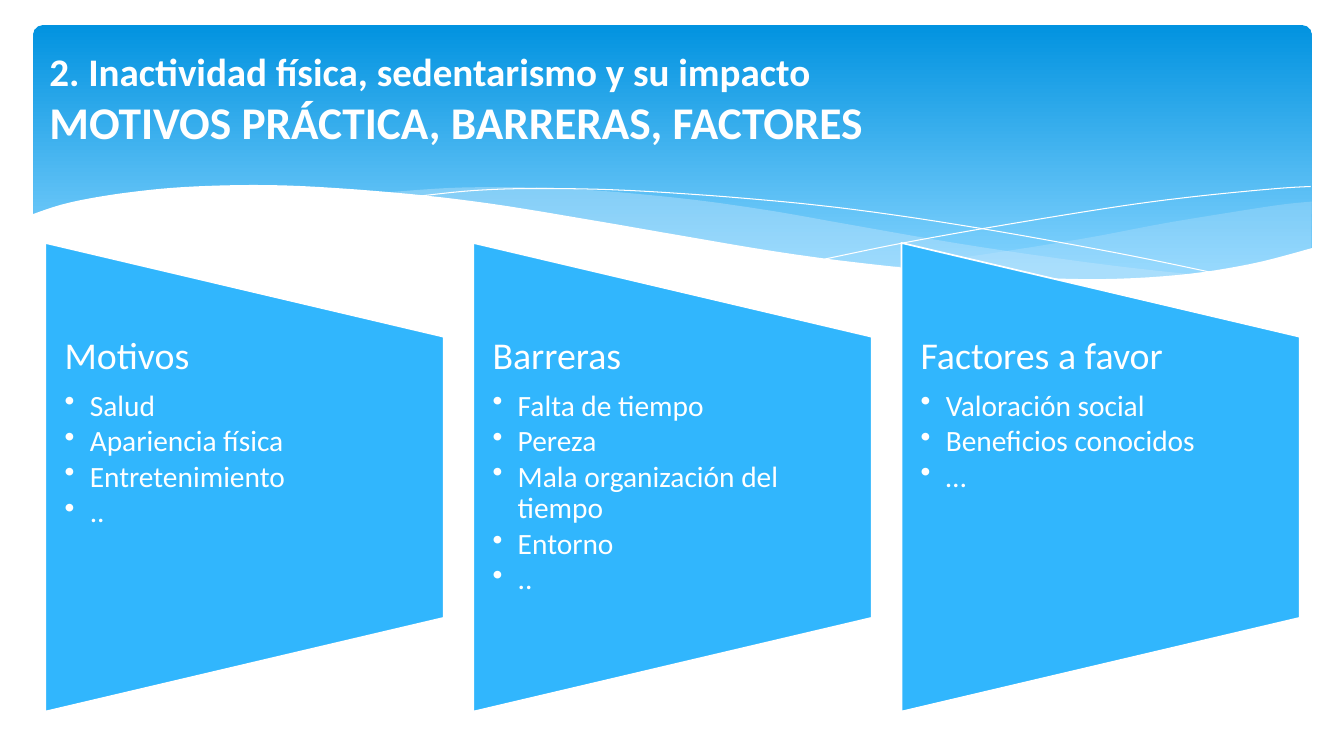
from lxml import etree
from pptx import Presentation
from pptx.dml.color import RGBColor
from pptx.enum.shapes import MSO_SHAPE
from pptx.enum.text import MSO_ANCHOR
from pptx.oxml.ns import qn
from pptx.util import Inches, Pt

ROUND = MSO_SHAPE.ROUNDED_RECTANGLE
FLAP = MSO_SHAPE.FLOWCHART_MANUAL_OPERATION
MIDDLE = MSO_ANCHOR.MIDDLE
FONT = "Calibri"
COLORS = {"deep": "0293E0", "sky": "83D3FE", "mist": "C6E7FC",
          "panel": "31B6FD", "white": "FFFFFF"}

TITLE = [("2. Inactividad física, sedentarismo y su impacto", 27.9),
         ("MOTIVOS PRÁCTICA, BARRERAS, FACTORES", 32.4)]
PANELS = [
    ("Motivos", ["Salud", "Apariencia física", "Entretenimiento", ".."]),
    ("Barreras", ["Falta de tiempo", "Pereza", "Mala organización del tiempo",
                  "Entorno", ".."]),
    ("Factores a favor", ["Valoración social", "Beneficios conocidos", "…"]),
]

TAIL_TOP = [(12.7, .16), (12.33, .2), (11.57, .32), (11.16, .39), (10.42, .53),
            (9.41, .69), (8.51, .81)]
TAIL_LOW = [(8.51, .81), (9.27, .89), (9.94, .93), (10.68, .94), (11.43, .91),
            (12.07, .8), (12.69, .63)]
MID_TOP = [(11.59, .89), (10.85, .81), (10.02, .7), (9.1, .56), (8.07, .38),
           (7.27, .24), (6.38, .12), (5.29, .03), (4.28, .02), (3.51, .07)]
MID_LOW = [(3.51, .07), (4.25, .15), (5.08, .27), (6.23, .48), (7.24, .65),
           (8.15, .77), (9.14, .88), (9.99, .94), (10.73, .94), (11.59, .89)]
CREST = [(3.81, .11), (4.39, .05), (5.04, .03), (5.94, .05), (7.11, .13),
         (8.17, .24), (9.38, .42), (10.77, .67), (11.79, .88)]
SWELL = [(7.87, .73), (8.65, .57), (9.66, .39), (10.84, .2), (11.63, .1),
         (12.36, .03), (12.69, .01)]
FRONT = [(12.71, .62), (12.09, .78), (11.36, .89), (10.47, .93), (9.37, .88),
         (8.32, .78), (7.41, .66), (6.4, .49), (5.65, .36), (4.55, .18),
         (3.59, .07), (2.51, 0), (1.63, .01), (.96, .07), (.38, .17), (0, .29)]


def color(name):
    """Return the named colour."""
    return RGBColor.from_string(COLORS[name])


def smooth(knots, steps=6):
    """Return points on a smooth curve through the knots."""
    ends = [knots[0], *knots, knots[-1]]
    points = []
    for a, b, c, d in zip(ends, ends[1:], ends[2:], ends[3:]):
        for step in range(steps):
            t = step / steps
            points.append(tuple(
                q + t * (r - p) / 2 + t * t * (p - 2.5 * q + 2 * r - s / 2)
                + t ** 3 * (1.5 * (q - r) + (s - p) / 2)
                for p, q, r, s in zip(a, b, c, d)))
    return points + [knots[-1]]


def wave(slide, box, points, fill=None, alpha=100):
    """Draw a filled wave, or a thin white curve if no fill is given."""
    left, top = box[:2]
    spots = [(Inches(left + x), Inches(top + y)) for x, y in points]
    pen = slide.shapes.build_freeform(*spots[0])
    pen.add_line_segments(spots[1:], close=bool(fill))
    shape = pen.convert_to_shape()
    shape.shadow.inherit = False
    if not fill:
        shape.fill.background()
        shape.line.color.rgb = color("white")
        shape.line.width = Pt(0)
        return
    shape.fill.solid()
    shape.fill.fore_color.rgb = color(fill)
    shape.line.fill.background()
    if alpha < 100:
        tint = shape.fill._xPr.find(".//" + qn("a:srgbClr"))
        etree.SubElement(tint, qn("a:alpha"), val=str(alpha * 1000))


def banner(slide, box):
    """Draw the blue header with its waves."""
    left, top, width, height = box
    shape = slide.shapes.add_shape(ROUND, *map(Inches, box))
    shape.adjustments[0] = 0.034
    shape.shadow.inherit = False
    shape.line.fill.background()
    shape.fill.gradient()
    shape.fill.gradient_angle = 270
    for stop, name, spot in zip(shape.fill.gradient_stops, ("deep", "sky"), (0, 0.9)):
        stop.color.rgb = color(name)
        stop.position = spot
    area = (left - 0.02, top + 1.59, width + 0.04, height - 1.25)
    wave(slide, area, smooth(TAIL_TOP) + smooth(TAIL_LOW), "mist", 29)
    wave(slide, area, smooth(MID_TOP) + smooth(MID_LOW), "mist", 40)
    wave(slide, area, smooth(CREST))
    wave(slide, area, smooth(SWELL))
    base = [(0, area[3]), (area[2], area[3])]
    wave(slide, area, smooth(FRONT) + base, "white")


def textbox(slide, box, side, edge):
    """Add a wrapping text box and return its frame."""
    frame = slide.shapes.add_textbox(*map(Inches, box)).text_frame
    frame.word_wrap = True
    frame.margin_left = frame.margin_right = Inches(side)
    frame.margin_top = frame.margin_bottom = Inches(edge)
    return frame


def style(para, size, bold=False):
    """Set the white font of a paragraph."""
    for run in para.runs:
        run.font.name = FONT
        run.font.size = Pt(size)
        run.font.bold = bold
        run.font.color.rgb = color("white")


def title(slide, box):
    """Write the two title lines."""
    frame = textbox(slide, box, 0.12, 0.06)
    frame.vertical_anchor = MIDDLE
    frame.text = "\n".join(text for text, size in TITLE)
    for para, (text, size) in zip(frame.paragraphs, TITLE):
        style(para, size, True)


def bullet(para):
    """Give a paragraph a hanging bullet."""
    para.level = 1
    props = para._p.get_or_add_pPr()
    props.set("marL", str(Inches(0.25)))
    props.set("indent", str(-Inches(0.25)))
    etree.SubElement(props, qn("a:buChar"), char="•")


def panel(slide, box, head, items):
    """Draw a tapered panel with its heading and bullets."""
    left, top, width, height = box
    shift = (height - width) / 2
    shape = slide.shapes.add_shape(
        FLAP, Inches(left - shift), Inches(top + shift), Inches(height), Inches(width))
    shape.rotation = 270
    shape.shadow.inherit = False
    shape.fill.solid()
    shape.fill.fore_color.rgb = color("panel")
    shape.line.color.rgb = color("white")
    shape.line.width = Pt(1.25)
    frame = textbox(slide, (left, top + height / 5, width, height * 0.6), 0.19, 0)
    frame.text = "\n".join([head, *items])
    for rank, para in enumerate(frame.paragraphs):
        para.line_spacing = 0.9
        para.space_after = Pt(2.7 if rank else 9.4)
        if rank:
            bullet(para)
        style(para, 21 if rank else 27)


def main():
    """Build and save the slide."""
    deck = Presentation()
    deck.slide_width, deck.slide_height = Inches(13.33), Inches(7.5)
    slide = deck.slides.add_slide(deck.slide_layouts[6])
    banner(slide, (0.33, 0.25, 12.68, 2.7))
    for rank, (head, items) in enumerate(PANELS):
        panel(slide, (0.45 + rank * 4.245, 2.41, 3.95, 4.65), head, items)
    title(slide, (0.37, 0.29, 9.06, 1.37))
    deck.save("out.pptx")


if __name__ == "__main__":
    main()
